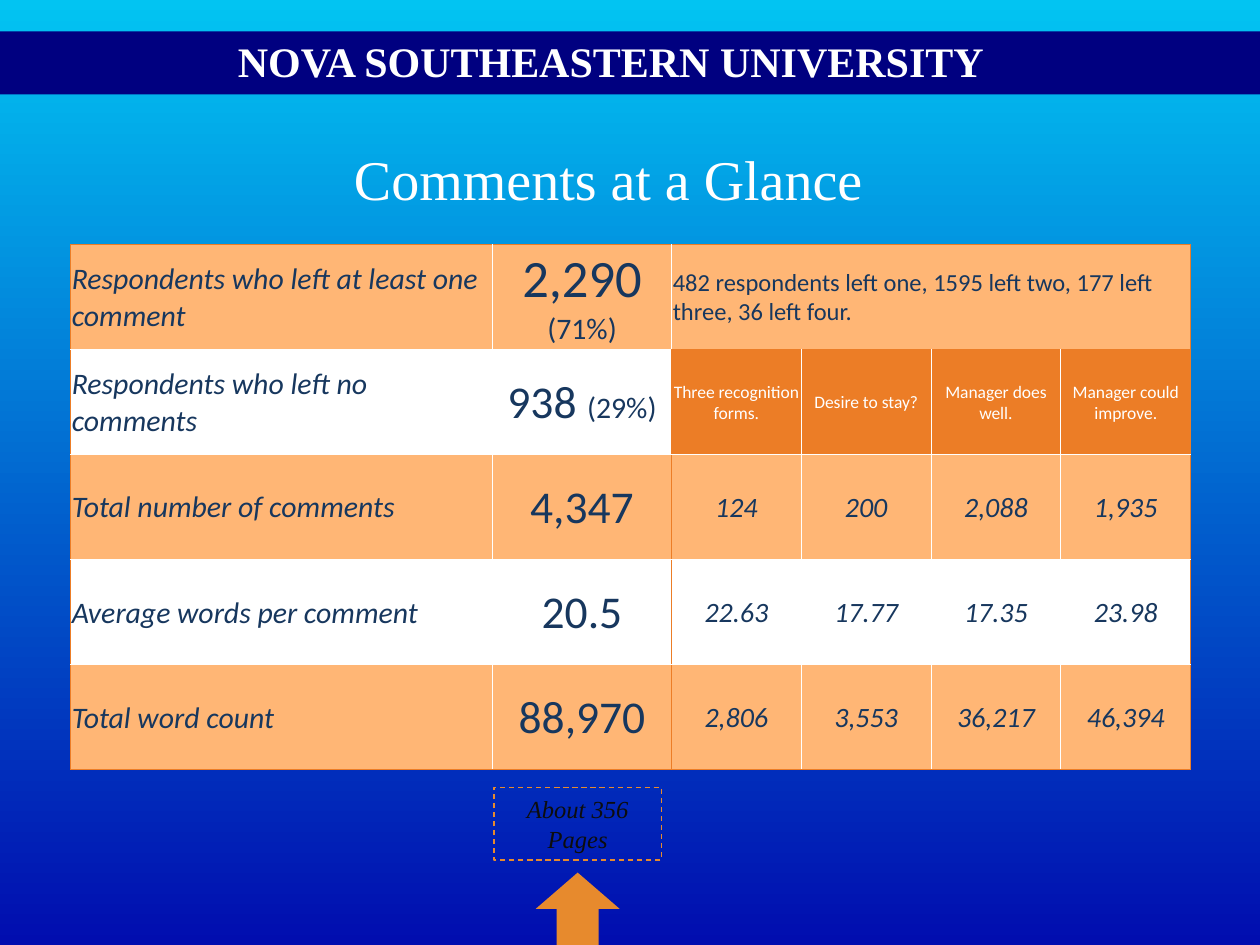
from lxml import etree
from pptx import Presentation
from pptx import util as u
from pptx.dml.color import RGBColor
from pptx.enum import dml, shapes, text
from pptx.oxml import parse_xml
from pptx.oxml.ns import nsdecls, qn

COLORS = {
    "sky": "02C4F2", "deep": "010DAF", "navy": "000080", "white": "FFFFFF",
    "peach": "FFB675", "orange": "EC7D26", "amber": "E78A2D",
    "ink": "17375E", "black": "0D0D0D",
}
GRID_COLUMNS, GRID_ROWS = 100, 75
SERIF, SANS = "Times New Roman", "Calibri"
LEFT, CENTER = text.PP_ALIGN.LEFT, text.PP_ALIGN.CENTER
MIDDLE, TOP = text.MSO_ANCHOR.MIDDLE, text.MSO_ANCHOR.TOP

deck = Presentation()
deck.slide_width, deck.slide_height = u.Inches(10), u.Inches(7.5)


def rgb(name):
    return RGBColor.from_string(COLORS[name])


def place(left, top, width, height):
    column = deck.slide_width / GRID_COLUMNS
    row = deck.slide_height / GRID_ROWS
    return [round(n) for n in (left * column, top * row, width * column, height * row)]


def write(frame, *pieces, font=SERIF, color="white", align=LEFT, anchor=MIDDLE,
          bold=False, italic=False, wrap=True, spacing=None):
    frame.word_wrap = wrap
    frame.vertical_anchor = anchor
    paragraph = frame.paragraphs[0]
    paragraph.alignment = align
    if spacing:
        paragraph.line_spacing = spacing
    for words, size in pieces:
        run = paragraph.add_run()
        run.text = words
        run.font.name, run.font.size = font, u.Pt(size)
        run.font.bold, run.font.italic = bold, italic
        run.font.color.rgb = rgb(color)


def add_plain_shape(slide, kind, box, fill=None):
    shape = slide.shapes.add_shape(kind, *place(*box))
    shape.shadow.inherit = False
    shape.line.fill.background()
    if fill:
        shape.fill.solid()
        shape.fill.fore_color.rgb = rgb(fill)
    else:
        shape.fill.background()
    return shape


def paint_background(slide):
    fill = slide.background.fill
    fill.gradient()
    fill.gradient_angle = 270
    for stop, name in zip(fill.gradient_stops, ("sky", "deep")):
        stop.color.rgb = rgb(name)


def add_banner(slide, left, top, width, height):
    add_plain_shape(slide, shapes.MSO_SHAPE.RECTANGLE, (left, top, width, height), "navy")
    university = slide.shapes.add_textbox(
        *place(left + 0.179 * width, top - 0.6, 0.646 * width, 5.4))
    write(university.text_frame, ("NOVA SOUTHEASTERN UNIVERSITY", 24),
          bold=True, anchor=TOP, wrap=False, spacing=1.1)


def set_title(slide, *box):
    title = slide.shapes.title
    title.left, title.top, title.width, title.height = place(*box)
    title.text_frame.auto_size = text.MSO_AUTO_SIZE.NONE
    write(title.text_frame, ("Comments at a Glance", 32), align=CENTER, anchor=TOP)


LABELS = ["Respondents who left at least one comment", "Respondents who left no comments",
          "Total number of comments", "Average words per comment", "Total word count"]
TOTALS = [[("2,290 ", 30), ("(71%)", 17)], [("938 ", 26), ("(29%)", 17)],
          [("4,347", 26)], [("20.5", 26)], [("88,970", 26)]]
BREAKDOWN = [
    ["482 respondents left one, 1595 left two, 177 left three, 36 left four."],
    ["Three recognition forms.", "Desire to stay?", "Manager does well.",
     "Manager could improve."],
    ["124", "200", "2,088", "1,935"],
    ["22.63", "17.77", "17.35", "23.98"],
    ["2,806", "3,553", "36,217", "46,394"],
]
COLUMN_WIDTHS = [33.5, 14.2] + [10.3] * 4
BREAKDOWN_FORMATS = {
    0: dict(size=14, color="ink", align=LEFT, italic=False),
    1: dict(size=10, color="white", align=CENTER, italic=False),
}
FIGURES = dict(size=16, color="ink", align=CENTER, italic=True)


def vertical_edge(row, line):
    outer = line in (0, len(COLUMN_WIDTHS))
    return "orange" if outer or (line == 2 and row > 0) else "white"


def horizontal_edge(line, column):
    outer = line in (0, len(LABELS))
    return "orange" if outer or (line == 1 and column >= 2) else "white"


def format_cell(cell, row, column):
    cell.margin_left = cell.margin_right = cell.margin_top = u.Inches(0.01)
    cell.margin_bottom = 0
    cell.vertical_anchor = MIDDLE
    edges = {
        "lnL": vertical_edge(row, column),
        "lnR": vertical_edge(row, column + cell.span_width if cell.is_merge_origin
                             else column + 1),
        "lnT": horizontal_edge(row, column),
        "lnB": horizontal_edge(row + 1, column),
    }
    properties = cell._tc.get_or_add_tcPr()
    for tag, name in edges.items():
        properties.append(parse_xml(
            f'<a:{tag} {nsdecls("a")} w="{u.Pt(0.5)}"><a:solidFill>'
            f'<a:srgbClr val="{COLORS[name]}"/></a:solidFill></a:{tag}>'))
    cell.fill.solid()
    band = "white" if row % 2 else "peach"
    cell.fill.fore_color.rgb = rgb("orange" if row == 1 and column >= 2 else band)


def write_cell(cell, *pieces, **style):
    write(cell.text_frame, *pieces, font=SANS, **style)
    cell.vertical_anchor = MIDDLE


def add_comment_table(slide, left, top, width, height):
    table = slide.shapes.add_table(
        len(LABELS), len(COLUMN_WIDTHS), *place(left, top, width, height)).table
    for column, share in zip(table.columns, COLUMN_WIDTHS):
        column.width = place(0, 0, width * share / sum(COLUMN_WIDTHS), 0)[2]
    table.cell(0, 2).merge(table.cell(0, len(COLUMN_WIDTHS) - 1))
    for row, (label, total, details) in enumerate(zip(LABELS, TOTALS, BREAKDOWN)):
        for column in range(2 + len(details)):
            format_cell(table.cell(row, column), row, column)
        write_cell(table.cell(row, 0), (label, 17), color="ink", italic=True)
        write_cell(table.cell(row, 1), *total, color="ink", align=CENTER)
        style = dict(BREAKDOWN_FORMATS.get(row, FIGURES))
        size = style.pop("size")
        for column, detail in enumerate(details, 2):
            write_cell(table.cell(row, column), (detail, size), **style)


def add_page_note(slide, left, top, width, height):
    note = add_plain_shape(slide, shapes.MSO_SHAPE.RECTANGLE,
                           (left, top, width, 0.46 * height))
    note.line.color.rgb = rgb("amber")
    note.line.width = u.Pt(0.75)
    note.line.dash_style = dml.MSO_LINE.DASH
    write(note.text_frame, ("About 356 Pages", 14), color="black",
          align=CENTER, italic=True)
    add_plain_shape(slide, shapes.MSO_SHAPE.UP_ARROW,
                    (left + width / 4, top + 0.54 * height, width / 2, 0.46 * height),
                    "amber")


def main():
    slide = deck.slides.add_slide(deck.slide_layouts[5])
    paint_background(slide)
    add_banner(slide, 0, 2.5, 100, 5)
    set_title(slide, 23.3, 11, 50, 6.4)
    add_comment_table(slide, 5.6, 19.4, 88.9, 41.7)
    add_page_note(slide, 39.2, 62.5, 13.3, 12.5)
    deck.save("out.pptx")


if __name__ == "__main__":
    main()
